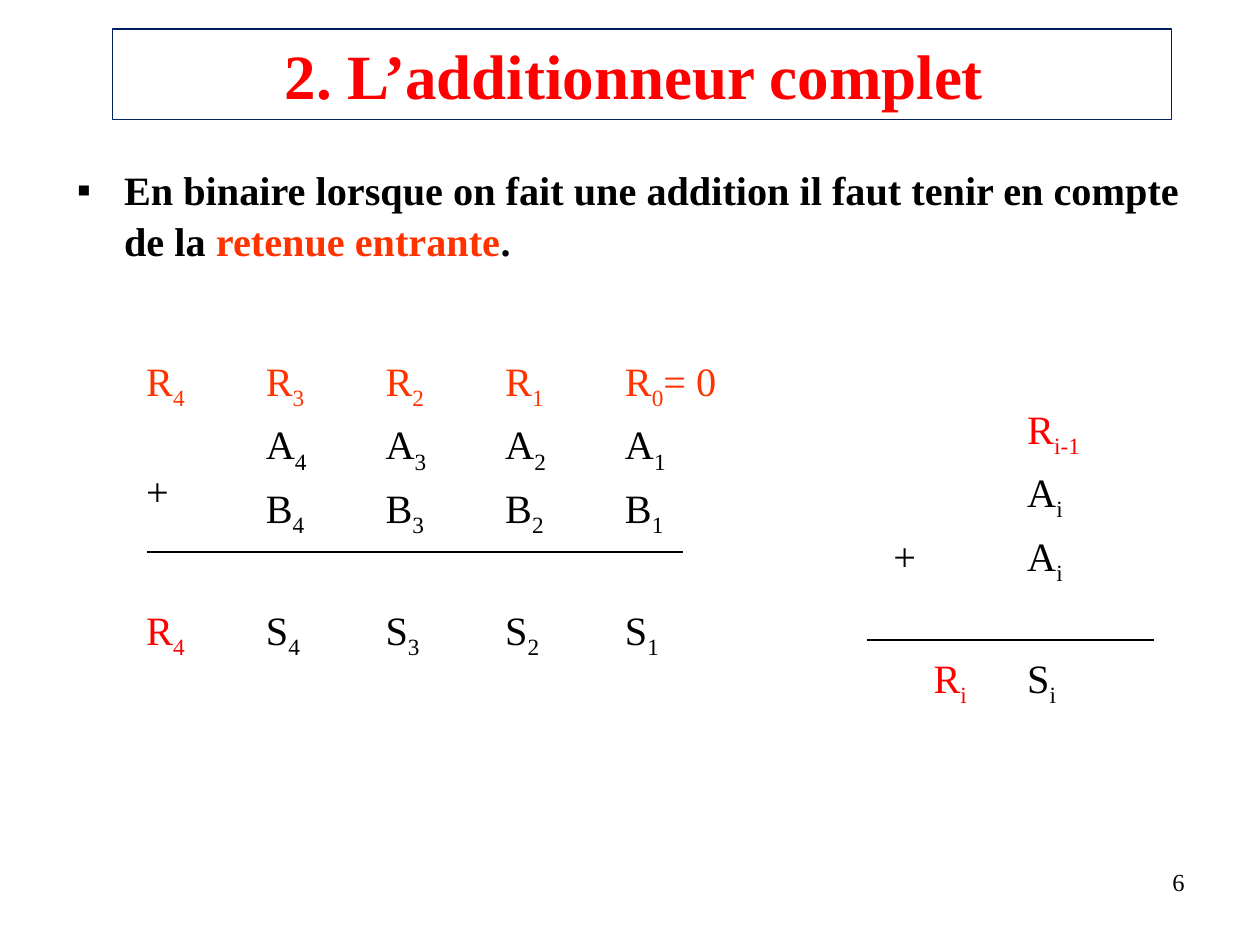
import pptx
import pptx.util
import pptx.dml.color
import pptx.enum.shapes
import pptx.enum.text
import pptx.oxml
from pptx.oxml.ns import qn

Pt = pptx.util.Pt
RGBColor = pptx.dml.color.RGBColor
Align = pptx.enum.text.PP_ALIGN
Anchor = pptx.enum.text.MSO_ANCHOR

BLACK = RGBColor(0x00, 0x00, 0x00)
RED = RGBColor(0xFF, 0x00, 0x00)
ORANGE = RGBColor(0xFF, 0x33, 0x00)
NAVY = RGBColor(0x00, 0x20, 0x60)

TITLE = "2. L’additionneur complet "
BODY = [
    ("En binaire lorsque on fait une addition il faut tenir en compte de la ", BLACK),
    ("retenue entrante", ORANGE),
    (".", BLACK),
]
PAGE_NUMBER = "6"

ROW_HEIGHTS = [36.3, 36.3, 36.3, 33.4, 36.3, 30.2]
ADDITIONS = [
    {
        "position": (76.3, 202.3),
        "columns": [68.4] * 4 + [77],
        "rows": [
            [("R", str(index), ORANGE) for index in (4, 3, 2, 1)] + [("R", "0", ORANGE, "= 0")],
            [("+", "", BLACK)] + [("A", str(index), BLACK) for index in (4, 3, 2, 1)],
            [None] + [("B", str(index), BLACK) for index in (4, 3, 2, 1)],
            [],
            [("R", "4", RED)] + [("S", str(index), BLACK) for index in (4, 3, 2, 1)],
        ],
        "merges": [((1, 0), (2, 0)), ((3, 0), (3, 4))],
        "margins": {(1, 0): {"margin_top": Pt(30.1)}},
        "rule": (84.2, 390.2, 315.4),
    },
    {
        "position": (503.3, 229.7),
        "columns": [76.5] * 2,
        "rows": [
            [None, ("R", "i-1", RED)],
            [None, ("A", "i", BLACK)],
            [("+", "", BLACK), ("A", "i", BLACK)],
            [],
            [("R", "i", RED), ("S", "i", BLACK)],
        ],
        "merges": [],
        "margins": {(4, 0): {"margin_left": Pt(30.2)}},
        "rule": (495.4, 659.5, 365.8),
    },
]


def apply(target, values):
    for name, value in values.items():
        setattr(target, name, value)


def place(shape, left, top, width, height):
    apply(shape, {"left": Pt(left), "top": Pt(top), "width": Pt(width), "height": Pt(height)})


def add_run(paragraph, text, size, color, bold=False, subscript=False):
    run = paragraph.add_run()
    run.text = text
    apply(run.font, {"name": "Times New Roman", "size": Pt(size), "bold": bold})
    run.font.color.rgb = color
    if subscript:
        run._r.get_or_add_rPr().set("baseline", "-25000")


def add_title(slide):
    title = slide.shapes.title
    place(title, 64.1, 16.6, 605.5, 51.8)
    title.line.color.rgb = NAVY
    title.line.width = Pt(0.75)
    apply(title.text_frame, {"vertical_anchor": Anchor.MIDDLE, "word_wrap": True,
                             "auto_size": pptx.enum.text.MSO_AUTO_SIZE.NONE})
    paragraph = title.text_frame.paragraphs[0]
    paragraph.alignment = Align.CENTER
    add_run(paragraph, TITLE, 36, RED, bold=True)


def add_body(slide):
    body = slide.placeholders[1]
    place(body, 36.7, 90, 649.4, 61.2)
    apply(body.text_frame, {"vertical_anchor": Anchor.TOP, "word_wrap": True,
                            "auto_size": pptx.enum.text.MSO_AUTO_SIZE.NONE})
    paragraph = body.text_frame.paragraphs[0]
    apply(paragraph, {"space_before": Pt(2), "line_spacing": 1.04})
    properties = paragraph._p.get_or_add_pPr()
    properties.set("marL", str(Pt(27)))
    properties.set("indent", str(Pt(-27)))
    bullet = pptx.oxml.parse_xml(
        '<a:buChar xmlns:a="http://schemas.openxmlformats.org/drawingml/2006/main" char="▪"/>')
    properties.append(bullet)
    for text, color in BODY:
        add_run(paragraph, text, 23, color, bold=True)


def add_rule(slide, left, right, height):
    line = slide.shapes.add_connector(pptx.enum.shapes.MSO_CONNECTOR.STRAIGHT,
                                      Pt(left), Pt(height), Pt(right), Pt(height))
    line.line.color.rgb = BLACK
    line.line.width = Pt(0.75)
    line._element.spPr.append(pptx.oxml.xmlchemy.OxmlElement("a:effectLst"))


def add_addition(slide, addition):
    left, top = addition["position"]
    columns = addition["columns"]
    frame = slide.shapes.add_table(len(ROW_HEIGHTS), len(columns), Pt(left), Pt(top),
                                   Pt(sum(columns)), Pt(sum(ROW_HEIGHTS)))
    table = frame.table
    apply(table, {"first_row": False, "horz_banding": False})
    for column, width in zip(table.columns, columns):
        column.width = Pt(width)
    for row, height in zip(table.rows, ROW_HEIGHTS):
        row.height = Pt(height)
    for cell in table.iter_cells():
        cell.fill.background()
    for start, end in addition["merges"]:
        table.cell(*start).merge(table.cell(*end))
    for position, margins in addition["margins"].items():
        apply(table.cell(*position), margins)
    for row_index, row in enumerate(addition["rows"]):
        for column_index, term in enumerate(row):
            if term is None:
                continue
            letter, index, color, *suffix = term
            paragraph = table.cell(row_index, column_index).text_frame.paragraphs[0]
            add_run(paragraph, letter, 23, color)
            if index:
                add_run(paragraph, index, 23, color, subscript=True)
            for text in suffix:
                add_run(paragraph, text, 23, color)
    add_rule(slide, *addition["rule"])


def add_page_number(slide):
    box = slide.shapes.add_textbox(Pt(516.2), Pt(491.8), Pt(167.8), Pt(37.4))
    box.text_frame.word_wrap = True
    paragraph = box.text_frame.paragraphs[0]
    paragraph.alignment = Align.RIGHT
    add_run(paragraph, PAGE_NUMBER, 14, BLACK)


def main():
    presentation = pptx.Presentation()
    apply(presentation, {"slide_width": Pt(720), "slide_height": Pt(540)})
    slide = presentation.slides.add_slide(presentation.slide_layouts[1])
    add_title(slide)
    add_body(slide)
    for addition in ADDITIONS:
        add_addition(slide, addition)
    add_page_number(slide)
    presentation.save("out.pptx")


if __name__ == "__main__":
    main()
